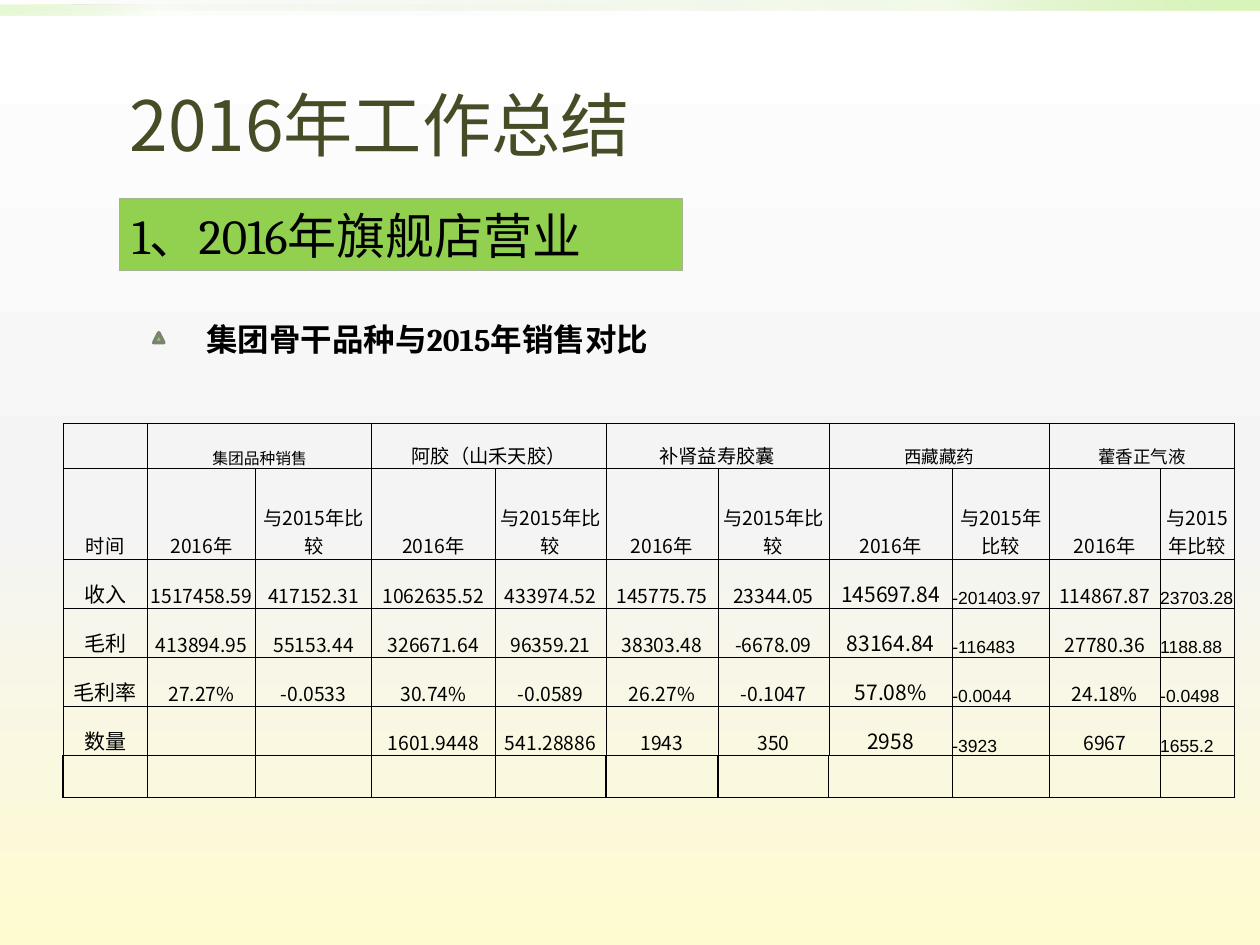
import pptx
import pptx.util
import pptx.dml.color
import pptx.enum.shapes
import pptx.enum.text
import pptx.oxml.ns
import lxml.etree

Inches, Pt = pptx.util.Inches, pptx.util.Pt
qn = pptx.oxml.ns.qn
SHAPE = pptx.enum.shapes.MSO_SHAPE
ANCHOR = pptx.enum.text.MSO_ANCHOR
ALIGN = pptx.enum.text.PP_ALIGN

SANS = "Noto Sans CJK SC"
COLS = [0.67, 0.86, 0.92, 0.98, 0.88, 0.89, 0.88, 0.98, 0.77, 0.88, 0.59]
ROWS = [0.36, 0.72, 0.39, 0.39, 0.39, 0.39, 0.33]
GROUPS = [("集团品种销售", 9), ("阿胶（山禾天胶）", 11), ("补肾益寿胶囊", 11),
          ("西藏藏药", 10), ("藿香正气液", 10)]
DATA = [
    ["收入", "1517458.59", "417152.31", "1062635.52", "433974.52", "145775.75",
     "23344.05", "145697.84", "-201403.97", "114867.87", "23703.28"],
    ["毛利", "413894.95", "55153.44", "326671.64", "96359.21", "38303.48",
     "-6678.09", "83164.84", "-116483", "27780.36", "1188.88"],
    ["毛利率", "27.27%", "-0.0533", "30.74%", "-0.0589", "26.27%",
     "-0.1047", "57.08%", "-0.0044", "24.18%", "-0.0498"],
    ["数量", "", "", "1601.9448", "541.28886", "1943",
     "350", "2958", "-3923", "6967", "1655.2"],
    [""] * len(COLS),
]


def color(code):
    """Turn a hex string into a colour."""
    return pptx.dml.color.RGBColor.from_string(code)


def style(run, size, face, code="000000", bold=False):
    """Format one run of text."""
    font = run.font
    font.size, font.name, font.bold = Pt(size), face, bold
    font.color.rgb = color(code)


def shade(fill, root, stops, angle):
    """Give a fill a linear gradient of (place, colour, opacity) stops."""
    fill.gradient()
    grad = root.find(".//" + qn("a:gradFill"))
    for child in list(grad):
        grad.remove(child)
    group = lxml.etree.SubElement(grad, qn("a:gsLst"))
    for place, code, alpha in stops:
        stop = lxml.etree.SubElement(group, qn("a:gs"), pos=str(place * 1000))
        tint = lxml.etree.SubElement(stop, qn("a:srgbClr"), val=code)
        if alpha < 100:
            lxml.etree.SubElement(tint, qn("a:alpha"), val=str(alpha * 1000))
    lxml.etree.SubElement(grad, qn("a:lin"), ang=str(angle * 60000), scaled="0")


def add_form(slide, kind, box, fill=None, line=None, width=0.75):
    """Add a preset shape without shadow."""
    form = slide.shapes.add_shape(kind, *map(Inches, box))
    form.shadow.inherit = False
    if fill:
        form.fill.solid()
        form.fill.fore_color.rgb = color(fill)
    if line:
        form.line.color.rgb = color(line)
        form.line.width = Pt(width)
    else:
        form.line.fill.background()
    return form


def add_band(slide, box, stops, angle):
    """Add a soft gradient band."""
    band = add_form(slide, SHAPE.RECTANGLE, box)
    shade(band.fill, band.element, stops, angle)


def write(shape, parts, size, code="000000", bold=False, anchor=ANCHOR.TOP,
          align=ALIGN.LEFT):
    """Write one line made of (text, face) parts into a shape."""
    frame = shape.text_frame
    frame.word_wrap, frame.vertical_anchor = True, anchor
    line = frame.paragraphs[0]
    line.alignment = align
    for text, face in parts:
        run = line.add_run()
        run.text = text
        style(run, size, face, code, bold)


def edge(cell, width):
    """Draw black borders on all sides of a cell."""
    props = cell._tc.get_or_add_tcPr()
    for spot, side in enumerate(["a:lnL", "a:lnR", "a:lnT", "a:lnB"]):
        line = lxml.etree.Element(qn(side), w=str(Pt(width)))
        fill = lxml.etree.SubElement(line, qn("a:solidFill"))
        lxml.etree.SubElement(fill, qn("a:srgbClr"), val="000000")
        props.insert(spot, line)


def fill_cell(cell, text, size, face=SANS, align=ALIGN.CENTER, width=0.5):
    """Set the text and look of a table cell."""
    cell.fill.background()
    cell.margin_left = cell.margin_right = 0
    cell.margin_top = cell.margin_bottom = 0
    cell.vertical_anchor = ANCHOR.BOTTOM
    edge(cell, width)
    line = cell.text_frame.paragraphs[0]
    line.text, line.alignment = text, align
    for run in line.runs:
        style(run, size, face)
    if not text:
        lxml.etree.SubElement(line._p, qn("a:endParaRPr"), sz=str(size * 100))


def add_sales(slide):
    """Add the table of sales by product."""
    frame = slide.shapes.add_table(len(ROWS), len(COLS), Inches(0.5), Inches(3.36),
                                   Inches(sum(COLS)), Inches(sum(ROWS)))
    table = frame.table
    table.first_row = table.horz_banding = False
    for column, width in zip(table.columns, COLS):
        column.width = Inches(width)
    for row, height in zip(table.rows, ROWS):
        row.height = Inches(height)

    heads = [("", 11)]
    for group in GROUPS:
        heads += [group, ("", 11)]
    for col, (text, size) in enumerate(heads):
        fill_cell(table.cell(0, col), text, size)
    for col in range(1, len(COLS), 2):
        table.cell(0, col).merge(table.cell(0, col + 1))

    years = ["时间"] + ["2016年", "与2015年比较"] * len(GROUPS)
    for col, text in enumerate(years):
        fill_cell(table.cell(1, col), text, 11)
    for row, values in enumerate(DATA, 2):
        width = 0.75 if row == len(ROWS) - 1 else 0.5
        for col, text in enumerate(values):
            cell = table.cell(row, col)
            if col in (8, 10):
                fill_cell(cell, text, 10, "Arial", ALIGN.LEFT, width)
            else:
                fill_cell(cell, text, 12 if col in (0, 7) else 11, width=width)


def main():
    """Build the slide and save it."""
    deck = pptx.Presentation()
    deck.slide_width, deck.slide_height = Inches(10), Inches(7.5)
    slide = deck.slides.add_slide(deck.slide_layouts[6])
    shade(slide.background.fill, slide.element,
          [(0, "FFFFFF", 100), (55, "F4F4F4", 100), (100, "FFFBD0", 100)], 90)
    add_band(slide, (0, 0, 10, 0.08),
             [(0, "7C9959", 0), (75, "BEE78F", 20), (100, "D9F6B9", 100)], 315)
    add_band(slide, (0, 0.04, 5, 0.08),
             [(0, "7C9959", 0), (75, "BEE78F", 5), (100, "D9F6B9", 60)], 135)

    title = slide.shapes.add_textbox(*map(Inches, (0.5, 0.55, 5.03, 0.86)))
    write(title, [("2016", SANS), ("年工作总结", "Calibri")], 39.6, "444D26",
          anchor=ANCHOR.MIDDLE, align=ALIGN.CENTER)
    label = add_form(slide, SHAPE.RECTANGLE, (0.95, 1.58, 4.47, 0.57),
                     "92D050", "A5B592")
    write(label, [("1、2016年旗舰店营业", "Cambria")], 28, anchor=ANCHOR.MIDDLE)
    add_sales(slide)
    add_form(slide, SHAPE.ISOSCELES_TRIANGLE, (1.22, 2.64, 0.08, 0.08),
             "A5B592", "7A866C", 2)
    topic = slide.shapes.add_textbox(*map(Inches, (1.54, 2.49, 4.08, 0.67)))
    write(topic, [("集团骨干品种与2015年销售对比", "Cambria")], 18, bold=True)
    deck.save("out.pptx")


if __name__ == "__main__":
    main()
